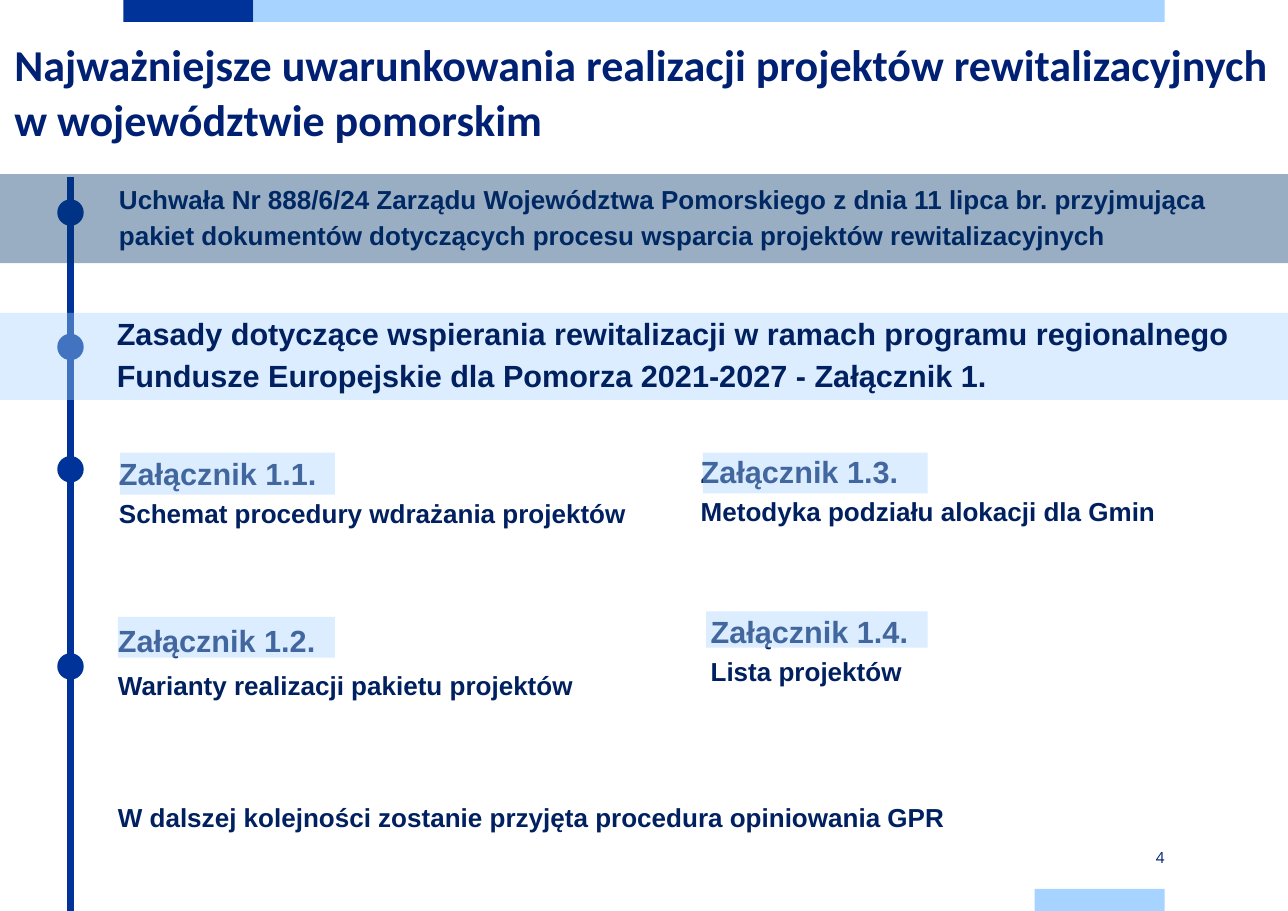
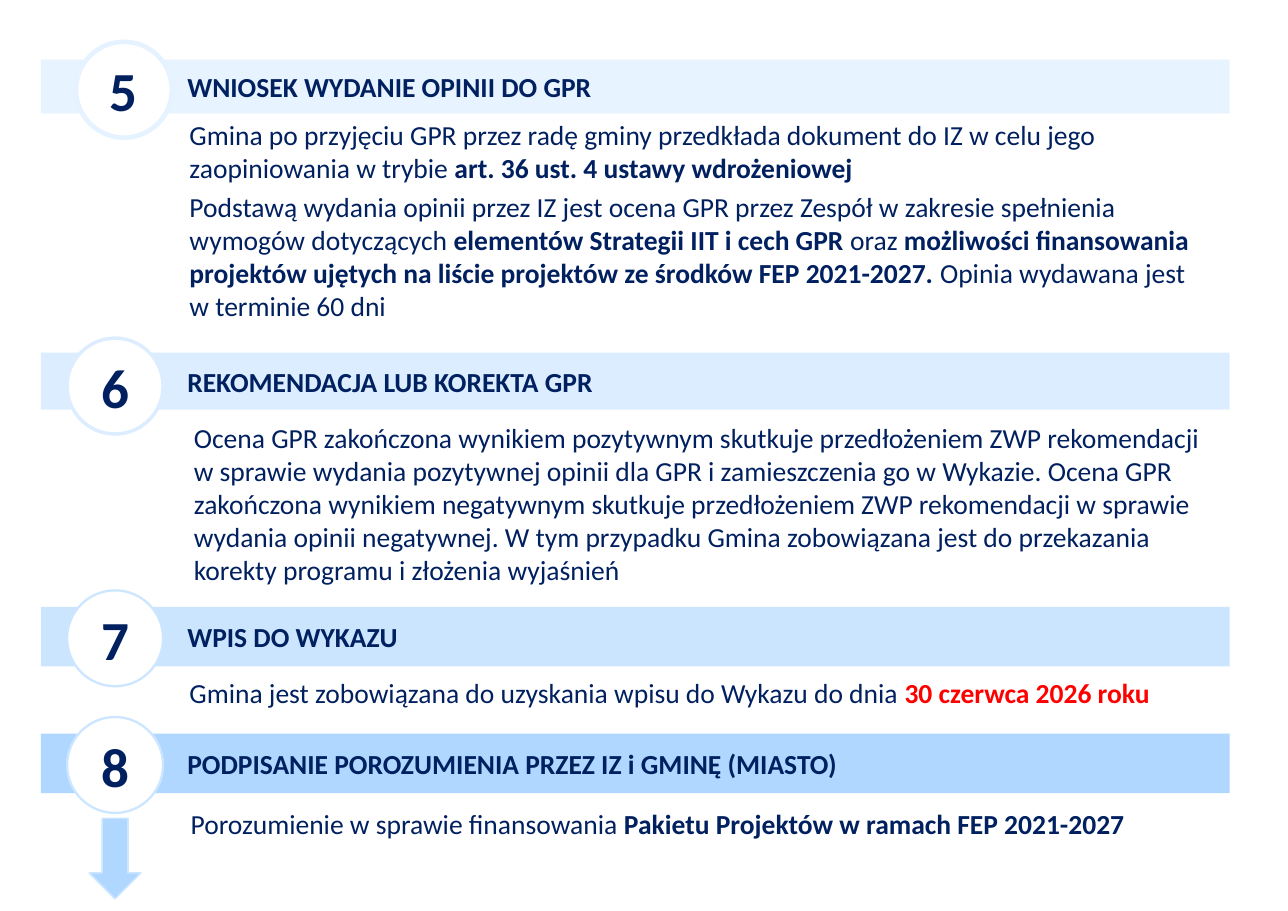
from lxml import etree
from pptx import Presentation
from pptx.dml.color import RGBColor
from pptx.enum.shapes import MSO_CONNECTOR, MSO_SHAPE
from pptx.enum.text import MSO_ANCHOR, MSO_AUTO_SIZE, PP_ALIGN
from pptx.oxml.ns import qn
from pptx.util import Inches, Pt

RECT, OVAL, DOWN_ARROW = MSO_SHAPE.RECTANGLE, MSO_SHAPE.OVAL, MSO_SHAPE.DOWN_ARROW
STRAIGHT = MSO_CONNECTOR.STRAIGHT
TOP, MIDDLE = MSO_ANCHOR.TOP, MSO_ANCHOR.MIDDLE
LEFT, CENTER, RIGHT = PP_ALIGN.LEFT, PP_ALIGN.CENTER, PP_ALIGN.RIGHT
NO_AUTOFIT = MSO_AUTO_SIZE.NONE

NAVY = RGBColor(0x00, 0x20, 0x60)
TITLE_NAVY = RGBColor(0x00, 0x20, 0x73)
BLUE = RGBColor(0x00, 0x33, 0x99)
STEEL = RGBColor(0x00, 0x35, 0x69)
SKY = RGBColor(0xA6, 0xD3, 0xFF)
PALE_SKY = RGBColor(0xC5, 0xE2, 0xFF)
MID_SKY = RGBColor(0x81, 0xC0, 0xFF)
STRONG_SKY = RGBColor(0xAF, 0xD7, 0xFF)
RING_5 = RGBColor(0xE5, 0xF2, 0xFF)
RING_6 = RGBColor(0xDB, 0xED, 0xFF)
RING_7 = RGBColor(0xCD, 0xE6, 0xFF)
RED = RGBColor(0xFF, 0x00, 0x00)
WHITE = RGBColor(0xFF, 0xFF, 0xFF)

PAGE_WIDTH, PAGE_HEIGHT = 11.69, 8.27


def add_panel(slide, kind, box, fill, opacity=100, line=None, line_width=0):
    """Add a flat preset shape; opacity is in percent."""
    panel = slide.shapes.add_shape(kind, *map(Inches, box))
    panel.shadow.inherit = False
    panel.fill.solid()
    panel.fill.fore_color.rgb = fill
    if opacity < 100:
        color = panel.fill._xPr.find(qn("a:solidFill"))[0]
        etree.SubElement(color, qn("a:alpha")).set("val", str(opacity * 1000))
    if line is None:
        panel.line.fill.background()
    else:
        panel.line.color.rgb = line
        panel.line.width = Pt(line_width)
    return panel


def add_text(slide, box, paragraphs, font_name="Arial", bold=True, spacing=1.0):
    """Add (size, pieces) paragraphs; every second piece is bold."""
    frame = slide.shapes.add_textbox(*map(Inches, box)).text_frame
    frame.word_wrap = True
    frame.margin_left = frame.margin_right = frame.margin_top = frame.margin_bottom = 0
    for index, (size, pieces) in enumerate(paragraphs):
        paragraph = frame.add_paragraph() if index else frame.paragraphs[0]
        paragraph.line_spacing = spacing
        paragraph.space_after = Pt(4)
        paragraph.font.name = font_name
        paragraph.font.size = Pt(size)
        paragraph.font.bold = bold
        paragraph.font.color.rgb = NAVY
        for position, piece in enumerate(pieces):
            run = paragraph.add_run()
            run.text = piece
            if position % 2:
                run.font.bold = True
    return frame


prs = Presentation()
prs.slide_width, prs.slide_height = Inches(PAGE_WIDTH), Inches(PAGE_HEIGHT)

# Slide 1: resolution and its attachments
slide = prs.slides.add_slide(prs.slide_layouts[5])
for box, color in [
    ((1.12, 0, 1.18, 0.2), BLUE),
    ((2.3, 0, 8.27, 0.2), SKY),
    ((9.39, 8.07, 1.18, 0.2), SKY),
]:
    add_panel(slide, RECT, box, color)

title = slide.shapes.title
title.left, title.top, title.width, title.height = map(Inches, (0.13, 0.32, 11.56, 0.98))
frame = title.text_frame
frame.text = "Najważniejsze uwarunkowania realizacji projektów rewitalizacyjnych w województwie pomorskim"
frame.word_wrap = True
frame.auto_size = NO_AUTOFIT
frame.vertical_anchor = TOP
frame.margin_left = frame.margin_right = frame.margin_top = frame.margin_bottom = 0
heading = frame.paragraphs[0]
heading.alignment = LEFT
heading.line_spacing = Pt(36)
heading.font.name = "Calibri"
heading.font.size = Pt(28.8)
heading.font.bold = True
heading.font.color.rgb = TITLE_NAVY

page_number = add_text(slide, (9.39, 7.68, 1.18, 0.2), [(10, ["4"])], "Open Sans", bold=False)
page_number.vertical_anchor = MIDDLE
page_number.paragraphs[0].alignment = RIGHT
page_number.paragraphs[0].space_after = Pt(0)
page_number.paragraphs[0].font.color.rgb = TITLE_NAVY

timeline = slide.shapes.add_connector(
    STRAIGHT, Inches(0.64), Inches(1.61), Inches(0.64), Inches(PAGE_HEIGHT))
timeline.line.color.rgb = BLUE
timeline.line.width = Pt(4.25)
etree.SubElement(timeline._element.spPr, qn("a:effectLst"))
for dot_top in (1.81, 3.03, 4.14, 5.93):
    add_panel(slide, OVAL, (0.52, dot_top, 0.24, 0.24), BLUE)

add_text(slide, (1.08, 1.63, 10.13, 0.74), [(17, [
    "Uchwała Nr 888/6/24 Zarządu Województwa Pomorskiego z dnia 11 lipca br. przyjmująca "
    "pakiet dokumentów dotyczących procesu wsparcia projektów rewitalizacyjnych"])], spacing=1.14)
add_panel(slide, RECT, (0, 1.58, PAGE_WIDTH, 0.81), STEEL, 40)

add_panel(slide, RECT, (0, 2.84, PAGE_WIDTH, 0.79), SKY, 40)
add_text(slide, (1.06, 2.81, 10.12, 0.77), [(20, [
    "Zasady dotyczące wspierania rewitalizacji w ramach programu regionalnego "
    "Fundusze Europejskie dla Pomorza 2021-2027 - Załącznik 1."])], spacing=1.14)

attachments = [
    ("1.1.", "Schemat procedury wdrażania projektów", (1.08, 4.13), 1.0, (1.09, 4.11, 1.95, 0.38)),
    ("1.2.", "Warianty realizacji pakietu projektów", (1.07, 5.6), 1.14, (1.07, 5.6, 1.97, 0.37)),
    ("1.3.", "Metodyka podziału alokacji dla Gmin", (6.36, 4.11), 1.0, (6.38, 4.11, 2.04, 0.37)),
    ("1.4.", "Lista projektów", (6.45, 5.56), 1.0, (6.41, 5.55, 2.01, 0.33)),
]
for number, subject, corner, spacing, highlight in attachments:
    add_text(slide, (*corner, 5, 0.8),
             [(20, [f"Załącznik {number}"]), (17, [subject])], spacing=spacing)
    add_panel(slide, RECT, highlight, SKY, 40)

add_text(slide, (1.07, 7.24, 9.8, 0.51),
         [(17, ["W dalszej kolejności zostanie przyjęta procedura opiniowania GPR"])], spacing=1.14)

# Slide 2: steps 5 to 8
slide = prs.slides.add_slide(prs.slide_layouts[6])
BAND_LEFT, BAND_WIDTH = 0.37, 10.79
HEADING_LEFT, BODY_RIGHT = 1.7, 10.92
CIRCLE_SIZE = 0.87

add_panel(slide, DOWN_ARROW, (0.81, 7.43, 0.47, 0.73), STRONG_SKY, line=RING_7, line_width=1)

# number, heading, band (top, height, fill, opacity), circle (left, top, ring, width),
# body corner, body paragraphs
steps = [
    ("5", "WNIOSEK WYDANIE OPINII DO GPR",
     (0.54, 0.49, PALE_SKY, 40), (0.69, 0.38, RING_5, 3), (1.72, 1.07), [
         ["Gmina po przyjęciu GPR przez radę gminy przedkłada dokument do IZ w celu jego "
          "zaopiniowania w trybie ", "art. 36 ust. 4 ustawy wdrożeniowej"],
         ["Podstawą wydania opinii przez IZ jest ocena GPR przez Zespół w zakresie spełnienia "
          "wymogów dotyczących ", "elementów Strategii IIT i cech GPR ", "oraz",
          " możliwości finansowania projektów ujętych na liście projektów ze środków "
          "FEP 2021-2027. ", "Opinia wydawana jest w terminie 60 dni"]]),
    ("6", "REKOMENDACJA LUB KOREKTA GPR",
     (3.2, 0.52, SKY, 40), (0.61, 3.07, RING_6, 2.25), (1.76, 3.82), [
         ["Ocena GPR zakończona wynikiem pozytywnym skutkuje przedłożeniem ZWP rekomendacji "
          "w sprawie wydania pozytywnej opinii dla GPR i zamieszczenia go w Wykazie. Ocena GPR "
          "zakończona wynikiem negatywnym skutkuje przedłożeniem ZWP rekomendacji w sprawie "
          "wydania opinii negatywnej. W tym przypadku Gmina zobowiązana jest do przekazania "
          "korekty programu i złożenia wyjaśnień"]]),
    ("7", "WPIS DO WYKAZU",
     (5.51, 0.54, MID_SKY, 40), (0.61, 5.36, RING_7, 1.5), (1.72, 6.14), [
         ["Gmina jest zobowiązana do uzyskania wpisu do Wykazu do dnia ",
          "30 czerwca 2026 roku"]]),
    ("8", "PODPISANIE POROZUMIENIA PRZEZ IZ i GMINĘ (MIASTO)",
     (6.66, 0.54, STRONG_SKY, 100), (0.61, 6.51, RING_7, 1.5), (1.73, 7.33), [
         ["Porozumienie w sprawie finansowania ", "Pakietu Projektów w ramach FEP 2021-2027"]]),
]
for number, step_title, band_style, circle_style, (body_left, body_top), body in steps:
    band_top, band_height, fill, opacity = band_style
    circle_left, circle_top, ring, ring_width = circle_style
    band = add_panel(slide, RECT, (BAND_LEFT, band_top, BAND_WIDTH, band_height), fill, opacity)
    circle = add_panel(slide, OVAL, (circle_left, circle_top, CIRCLE_SIZE, CIRCLE_SIZE),
                       WHITE, line=ring, line_width=ring_width)
    for panel, text, size, alignment, margin in [
        (band, step_title, 18, LEFT, HEADING_LEFT - BAND_LEFT),
        (circle, number, 36, CENTER, 0),
    ]:
        frame = panel.text_frame
        frame.text = text
        frame.vertical_anchor = MIDDLE
        frame.margin_left = Inches(margin)
        frame.margin_right = 0
        label = frame.paragraphs[0]
        label.alignment = alignment
        label.font.name = "Calibri"
        label.font.size = Pt(size)
        label.font.bold = True
        label.font.color.rgb = NAVY
    body_frame = add_text(slide, (body_left, body_top, BODY_RIGHT - body_left, 0.54),
                          [(18, pieces) for pieces in body], "Calibri", bold=False)
    if number == "7":
        deadline = body_frame.paragraphs[0].runs[1]
        deadline.font.color.rgb = RED

prs.save("out.pptx")
